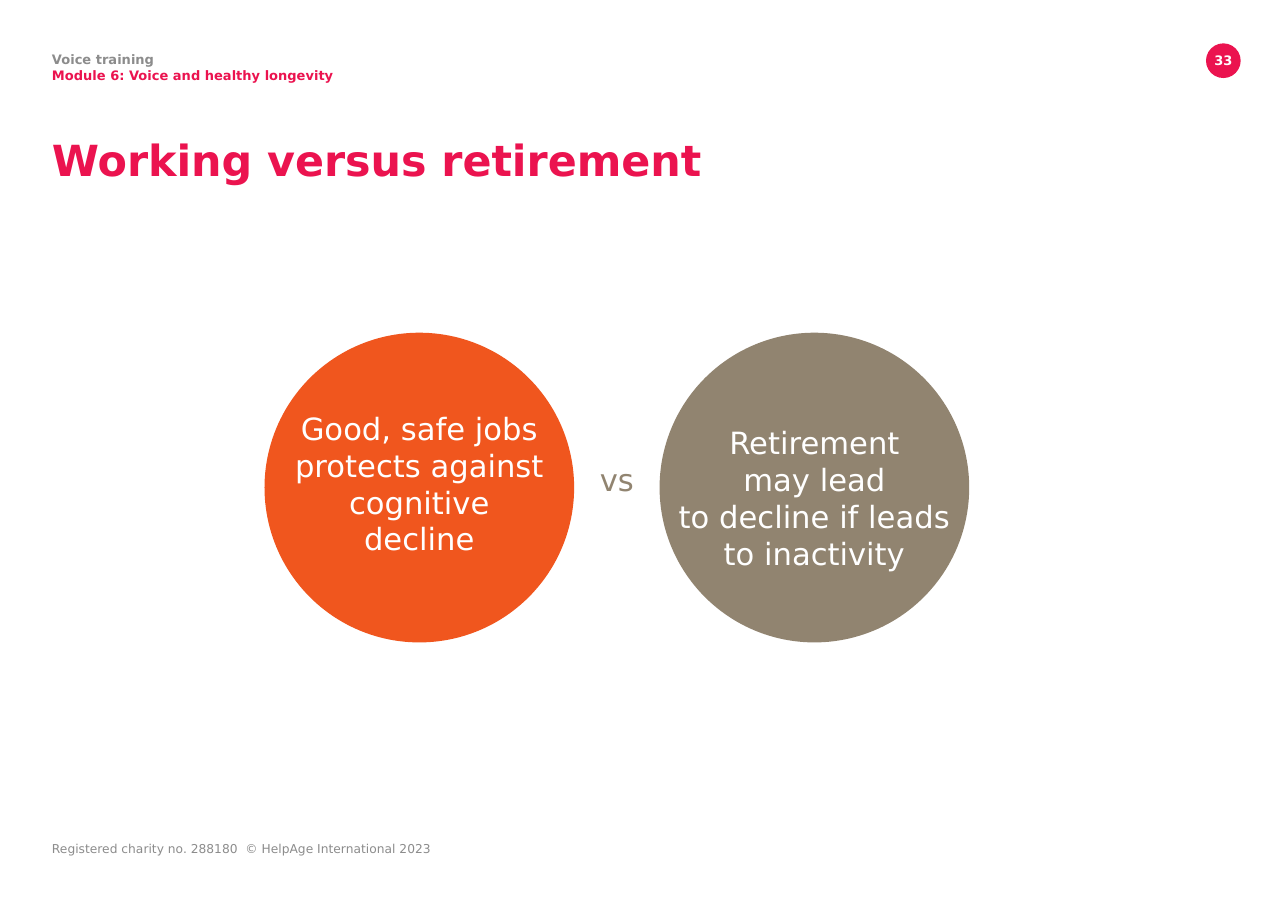
import pptx
import pptx.dml.color
import pptx.enum.shapes
import pptx.enum.text
import pptx.util

Cm = pptx.util.Cm
Pt = pptx.util.Pt
RGBColor = pptx.dml.color.RGBColor
Align = pptx.enum.text.PP_ALIGN

PINK = RGBColor(0xEB, 0x13, 0x4F)
ORANGE = RGBColor(0xF0, 0x56, 0x1E)
TAUPE = RGBColor(0x91, 0x84, 0x70)
GREY = RGBColor(0x8C, 0x8C, 0x8C)
WHITE = RGBColor(0xFF, 0xFF, 0xFF)


class TrainingPage:
    font_name = "DejaVu Sans"

    def __init__(self, deck):
        self.page = deck.slides.add_slide(deck.slide_layouts[6])

    def circle(self, left, top, diameter, colour):
        circle = self.page.shapes.add_shape(
            pptx.enum.shapes.MSO_SHAPE.OVAL,
            Cm(left), Cm(top), Cm(diameter), Cm(diameter))
        circle.shadow.inherit = False
        circle.fill.solid()
        circle.fill.fore_color.rgb = colour
        circle.line.fill.background()

    def text(self, left, top, width, height, lines, size,
             bold=False, align=Align.LEFT, spacing=None):
        """Write one paragraph for each (wording, colour) pair in lines."""
        box = self.page.shapes.add_textbox(Cm(left), Cm(top), Cm(width), Cm(height))
        frame = box.text_frame
        frame.word_wrap = True
        frame.margin_left = frame.margin_right = 0
        frame.margin_top = frame.margin_bottom = 0
        for index, (wording, colour) in enumerate(lines):
            para = frame.add_paragraph() if index else frame.paragraphs[0]
            para.text = wording
            para.alignment = align
            if spacing:
                para.line_spacing = Pt(spacing)
            for span in para.runs:
                span.font.name = self.font_name
                span.font.size = Pt(size)
                span.font.bold = bold
                span.font.color.rgb = colour


def main():
    deck = pptx.Presentation()
    deck.slide_width, deck.slide_height = Cm(29.7), Cm(21)
    page = TrainingPage(deck)
    margin = 1.2

    # Header and page number
    page.text(margin, 1.2, 13, 1.1,
              [("Voice training", GREY),
               ("Module 6: Voice and healthy longevity", PINK)],
              8.5, bold=True, spacing=10)
    page.circle(27.81, 1, 0.8, PINK)
    page.text(27.81, 1.2, 0.8, 0.55, [("33", WHITE)], 8.5, bold=True, align=Align.CENTER)

    # Title
    page.text(margin, 3.1, 23.5, 1.95, [("Working versus retirement", PINK)],
              28, bold=True, spacing=33)

    # Two compared circles
    diameter, text_width = 7.14, 6.5
    inset = (diameter - text_width) / 2
    sides = [
        (6.1, 9.45, ORANGE, "Good, safe jobs protects against cognitive\ndecline"),
        (15.21, 9.78, TAUPE, "Retirement\nmay lead\nto decline if leads to inactivity"),
    ]
    for left, text_top, colour, wording in sides:
        page.circle(left, 7.67, diameter, colour)
        page.text(left + inset, text_top, text_width, 3.6, [(wording, WHITE)],
                  20, align=Align.CENTER)
    page.text(13.44, 10.62, 1.57, 0.96, [("vs", TAUPE)], 20, align=Align.CENTER)

    # Footer
    page.text(margin, 19.4, 11.7, 0.85,
              [("Registered charity no. 288180  © HelpAge International 2023", GREY)], 8)

    deck.save("out.pptx")


if __name__ == "__main__":
    main()
